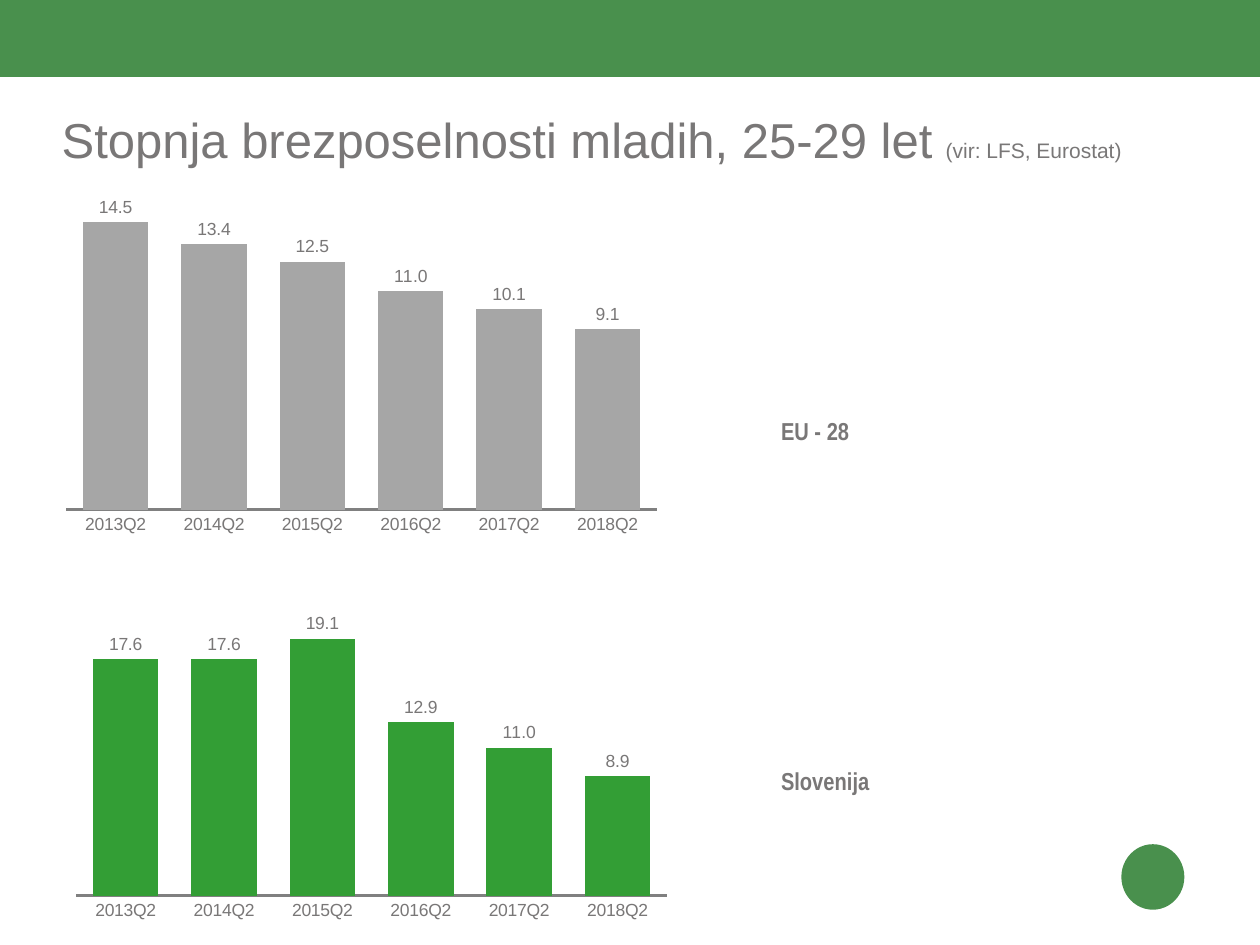
from dataclasses import dataclass

from lxml import etree
from pptx import Presentation
from pptx.chart.data import CategoryChartData
from pptx.dml.color import RGBColor
from pptx.enum.chart import XL_CHART_TYPE, XL_LABEL_POSITION, XL_TICK_LABEL_POSITION, XL_TICK_MARK
from pptx.enum.shapes import MSO_SHAPE
from pptx.oxml.ns import qn
from pptx.slide import Slide
from pptx.util import Inches, Pt

COLUMN_CLUSTERED = XL_CHART_TYPE.COLUMN_CLUSTERED
OUTSIDE_END = XL_LABEL_POSITION.OUTSIDE_END
NO_LABELS = XL_TICK_LABEL_POSITION.NONE
NO_TICKS = XL_TICK_MARK.NONE
RECTANGLE = MSO_SHAPE.RECTANGLE
OVAL = MSO_SHAPE.OVAL

GREEN = RGBColor(0x49, 0x90, 0x4D)
BAR_GREEN = RGBColor(0x33, 0x9E, 0x35)
BAR_GRAY = RGBColor(0xA6, 0xA6, 0xA6)
AXIS_GRAY = RGBColor(0x80, 0x80, 0x80)
TEXT_GRAY = RGBColor(0x79, 0x77, 0x77)

QUARTERS = [f"{year}Q2" for year in range(2013, 2019)]
PLOT_AREA = {"x": 0.02, "y": 0.02, "w": 0.96, "h": 0.89}


@dataclass
class Region:
    name: str
    rates: tuple[float, ...]
    color: RGBColor
    axis_maximum: float
    left: float
    top: float
    height: float
    label_top: float


REGIONS = [
    Region("EU - 28", (14.5, 13.4, 12.5, 11.0, 10.1, 9.1), BAR_GRAY, 16, 0.43, 1.47, 2.83, 3.25),
    Region("Slovenija", (17.6, 17.6, 19.1, 12.9, 11.0, 8.9), BAR_GREEN, 25, 0.51, 4.38, 3.0, 6.03),
]


def add_plain_shape(slide: Slide, kind: MSO_SHAPE, left: float, top: float,
                    width: float, height: float) -> None:
    shape = slide.shapes.add_shape(kind, Inches(left), Inches(top), Inches(width), Inches(height))
    shape.shadow.inherit = False
    shape.fill.solid()
    shape.fill.fore_color.rgb = GREEN
    shape.line.fill.background()


def add_title(slide: Slide) -> None:
    box = slide.shapes.add_textbox(Inches(0.49), Inches(0.82), Inches(9.26), Inches(0.71))
    frame = box.text_frame
    frame.word_wrap = True
    frame.margin_left = frame.margin_top = frame.margin_right = frame.margin_bottom = 0
    paragraph = frame.paragraphs[0]
    paragraph.line_spacing = 1.1
    for text, size in (("Stopnja brezposelnosti mladih, 25-29 let ", 28), ("(vir: LFS, Eurostat)", 12)):
        run = paragraph.add_run()
        run.text = text
        run.font.name = "Arial"
        run.font.size = Pt(size)
        run.font.color.rgb = TEXT_GRAY


def add_region_label(slide: Slide, region: Region) -> None:
    box = slide.shapes.add_textbox(Inches(6.1), Inches(region.label_top), Inches(1.69), Inches(0.34))
    box.text_frame.word_wrap = True
    box.text_frame.text = region.name
    font = box.text_frame.paragraphs[0].runs[0].font
    font.name = "Arial Narrow"
    font.size = Pt(14)
    font.bold = True
    font.color.rgb = TEXT_GRAY


def add_rate_chart(slide: Slide, region: Region) -> None:
    data = CategoryChartData(number_format="0.0")
    data.categories = QUARTERS
    data.add_series("Series 1", region.rates)
    chart = slide.shapes.add_chart(COLUMN_CLUSTERED, Inches(region.left), Inches(region.top),
                                   Inches(4.88), Inches(region.height), data).chart
    chart.has_legend = False
    chart.has_title = False
    chart.font.name = "Arial"
    chart.font.size = Pt(10)
    chart.font.color.rgb = TEXT_GRAY

    category_axis = chart.category_axis
    category_axis.major_tick_mark = NO_TICKS
    category_axis.format.line.color.rgb = AXIS_GRAY
    category_axis.format.line.width = Pt(1.5)

    value_axis = chart.value_axis
    value_axis.minimum_scale = 0
    value_axis.maximum_scale = region.axis_maximum
    value_axis.has_major_gridlines = False
    value_axis.major_tick_mark = NO_TICKS
    value_axis.tick_label_position = NO_LABELS
    value_axis.format.line.fill.background()

    plot = chart.plots[0]
    plot.gap_width = 50
    plot.vary_by_categories = False
    plot.series[0].format.fill.solid()
    plot.series[0].format.fill.fore_color.rgb = region.color
    plot.has_data_labels = True
    labels = plot.data_labels
    labels.show_value = True
    labels.number_format = "0.0"
    labels.number_format_is_linked = False
    labels.position = OUTSIDE_END
    fix_plot_area(chart._chartSpace.chart.plotArea)


def fix_plot_area(plot_area: etree._Element) -> None:
    """Pin the inner plot area to fixed fractions of the chart."""
    layout = plot_area.find(qn("c:layout"))
    if layout is None:
        layout = etree.Element(qn("c:layout"))
        plot_area.insert(0, layout)
    manual = etree.SubElement(layout, qn("c:manualLayout"))
    settings = {"layoutTarget": "inner", "xMode": "edge", "yMode": "edge", **PLOT_AREA}
    for tag, value in settings.items():
        etree.SubElement(manual, qn(f"c:{tag}")).set("val", str(value))


def main() -> None:
    presentation = Presentation()
    presentation.slide_width = Inches(10)
    presentation.slide_height = Inches(7.5)
    slide = presentation.slides.add_slide(presentation.slide_layouts[6])

    add_plain_shape(slide, RECTANGLE, 0, -0.01, 10, 0.62)
    add_plain_shape(slide, OVAL, 8.9, 6.7, 0.5, 0.52)
    add_title(slide)
    for region in REGIONS:
        add_region_label(slide, region)
        add_rate_chart(slide, region)
    presentation.save("out.pptx")


if __name__ == "__main__":
    main()
